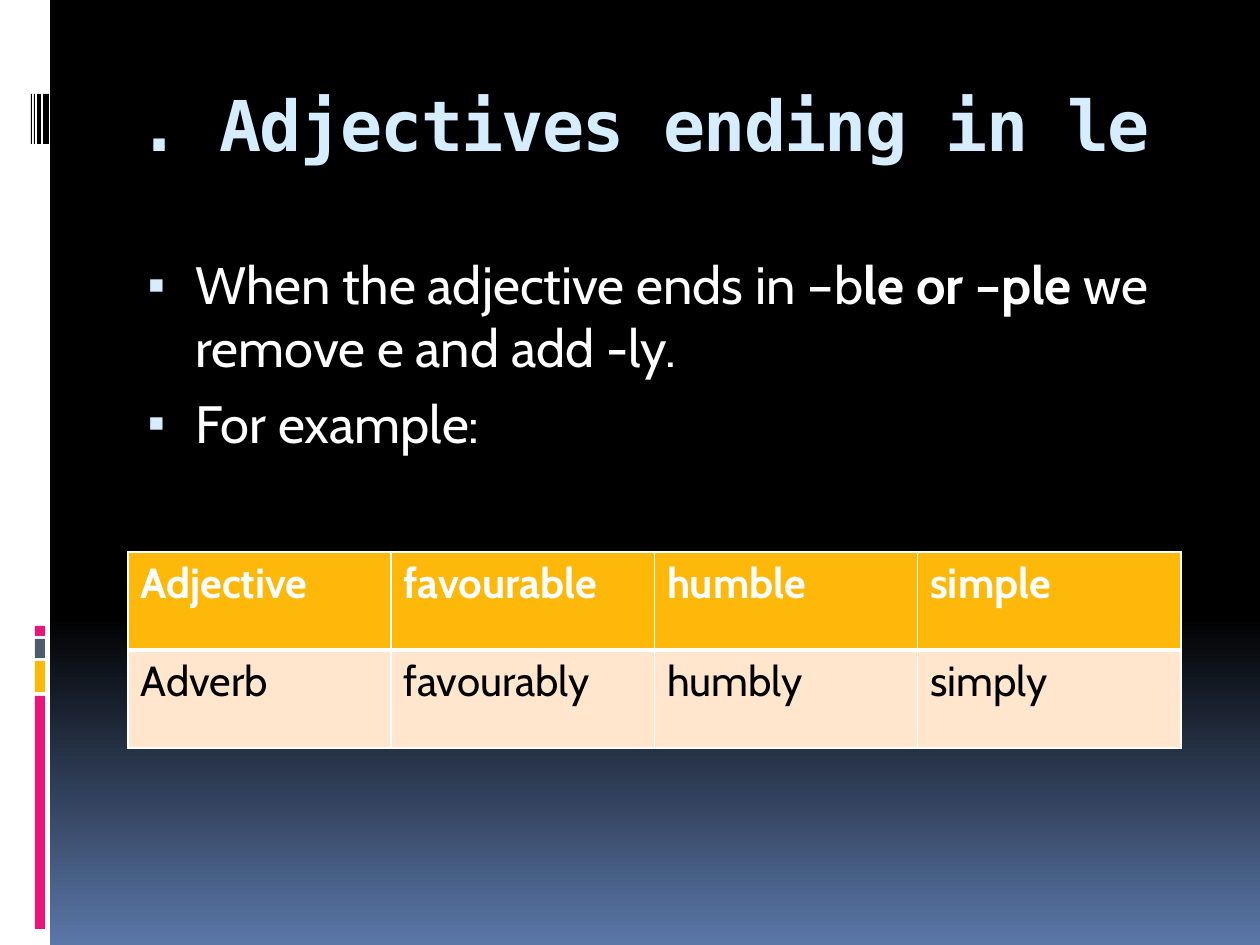
from lxml.etree import SubElement
from pptx import Presentation
from pptx.dml.color import RGBColor
from pptx.enum.shapes import MSO_SHAPE
from pptx.enum.text import MSO_ANCHOR, MSO_AUTO_SIZE, PP_ALIGN
from pptx.oxml import parse_xml
from pptx.oxml.ns import nsdecls, qn
from pptx.util import Pt

PX = 914400 / 126
WHITE = RGBColor(255, 255, 255)
BLACK = RGBColor(0, 0, 0)
BLUE = RGBColor(0x5B, 0x77, 0xA8)
PALE = RGBColor(0xD6, 0xEC, 0xFF)
PINK = RGBColor(0xEA, 0x15, 0x7A)
GOLD = RGBColor(0xFE, 0xB8, 0x0A)
SLATE = RGBColor(0x4E, 0x5B, 0x6F)
CREAM = RGBColor(0xFF, 0xE6, 0xCC)


def px(*nums):
    """Turn pixels into EMU."""
    return [round(n * PX) for n in nums]


def write(para, text, size=30, font="Cabin", color=WHITE, bold=False):
    run = para.add_run()
    run.text = text
    run.font.size = Pt(size)
    run.font.name = font
    run.font.color.rgb = color
    run.font.bold = bold
    return run


deck = Presentation()
deck.slide_width, deck.slide_height = px(1260, 945)
slide = deck.slides.add_slide(deck.slide_layouts[1])

# Background: black down to 65 %, then fading to blue
back = slide.background.fill
back.gradient()
back.gradient_angle = 270
for stop, place, color in zip(back.gradient_stops, (0.65, 1), (BLACK, BLUE)):
    stop.position = place
    stop.color.rgb = color

# Left band with colour blocks and thin bars
bars = [(0, 0, 50, 945, WHITE)]
bars += [(35, top, 10, high, color) for top, high, color in (
    (696, 233, PINK), (661, 31, GOLD), (639, 19, SLATE), (626, 10, PINK))]
bars += [(left, 94, wide, 50, BLACK)
         for left, wide in ((43, 6), (37, 4), (34, 1), (31, 1))]
for left, top, wide, high, color in bars:
    bar = slide.shapes.add_shape(MSO_SHAPE.RECTANGLE, *px(left, top, wide, high))
    bar.shadow.inherit = False
    bar.fill.solid()
    bar.fill.fore_color.rgb = color
    bar.line.fill.background()

# Title and list
title, body = slide.shapes.title, slide.placeholders[1]
for holder, top, high in ((title, 71, 126), (body, 246, 630)):
    holder.left, holder.top, holder.width, holder.height = px(126, top, 1071, high)
    frame = holder.text_frame
    frame.word_wrap = True
    frame.auto_size = MSO_AUTO_SIZE.NONE
    frame.vertical_anchor = MSO_ANCHOR.TOP

title.text_frame.margin_top = px(11)[0]
head = title.text_frame.paragraphs[0]
head.alignment = PP_ALIGN.LEFT
run = write(head, ". Adjectives ending in le", size=40,
            font="DejaVu Sans Mono", color=PALE, bold=True)
run.font._element.set("spc", "-100")

items = [
    [("When the adjective ends in –b", False), ("le or –ple ", True),
     ("we remove e and add -ly.", False)],
    [("For example:", False)],
]
for i, item in enumerate(items):
    frame = body.text_frame
    para = frame.add_paragraph() if i else frame.paragraphs[0]
    para.space_before = Pt(7)
    props = para._p.get_or_add_pPr()
    left, hang = px(57, -48)
    props.set("marL", str(left))
    props.set("indent", str(hang))
    tint = SubElement(props, qn("a:buClr"))
    SubElement(tint, qn("a:srgbClr"), val=str(PALE))
    SubElement(props, qn("a:buSzPct"), val="95000")
    SubElement(props, qn("a:buChar"), char="▪")
    for text, bold in item:
        write(para, text, bold=bold)

# Table
rows = [
    ("Adjective", "favourable", "humble", "simple"),
    ("Adverb", "favourably", "humbly", "simply"),
]
looks = [(GOLD, WHITE, True), (CREAM, BLACK, False)]
table = slide.shapes.add_table(2, 4, *px(128, 552, 1053, 196)).table
for r, (words, (fill, color, bold)) in enumerate(zip(rows, looks)):
    # The line between header and body is thick
    sides = {"L": 1, "R": 1, "T": 3 if r else 1, "B": 1 if r else 3}
    for c, word in enumerate(words):
        cell = table.cell(r, c)
        cell.fill.solid()
        cell.fill.fore_color.rgb = fill
        write(cell.text_frame.paragraphs[0], word, size=24, color=color, bold=bold)
        for i, (side, width) in enumerate(sides.items()):
            edge = parse_xml(
                f'<a:ln{side} {nsdecls("a")} w="{Pt(width)}"><a:solidFill>'
                f'<a:srgbClr val="{WHITE}"/></a:solidFill></a:ln{side}>')
            cell._tc.get_or_add_tcPr().insert(i, edge)

deck.save("out.pptx")
